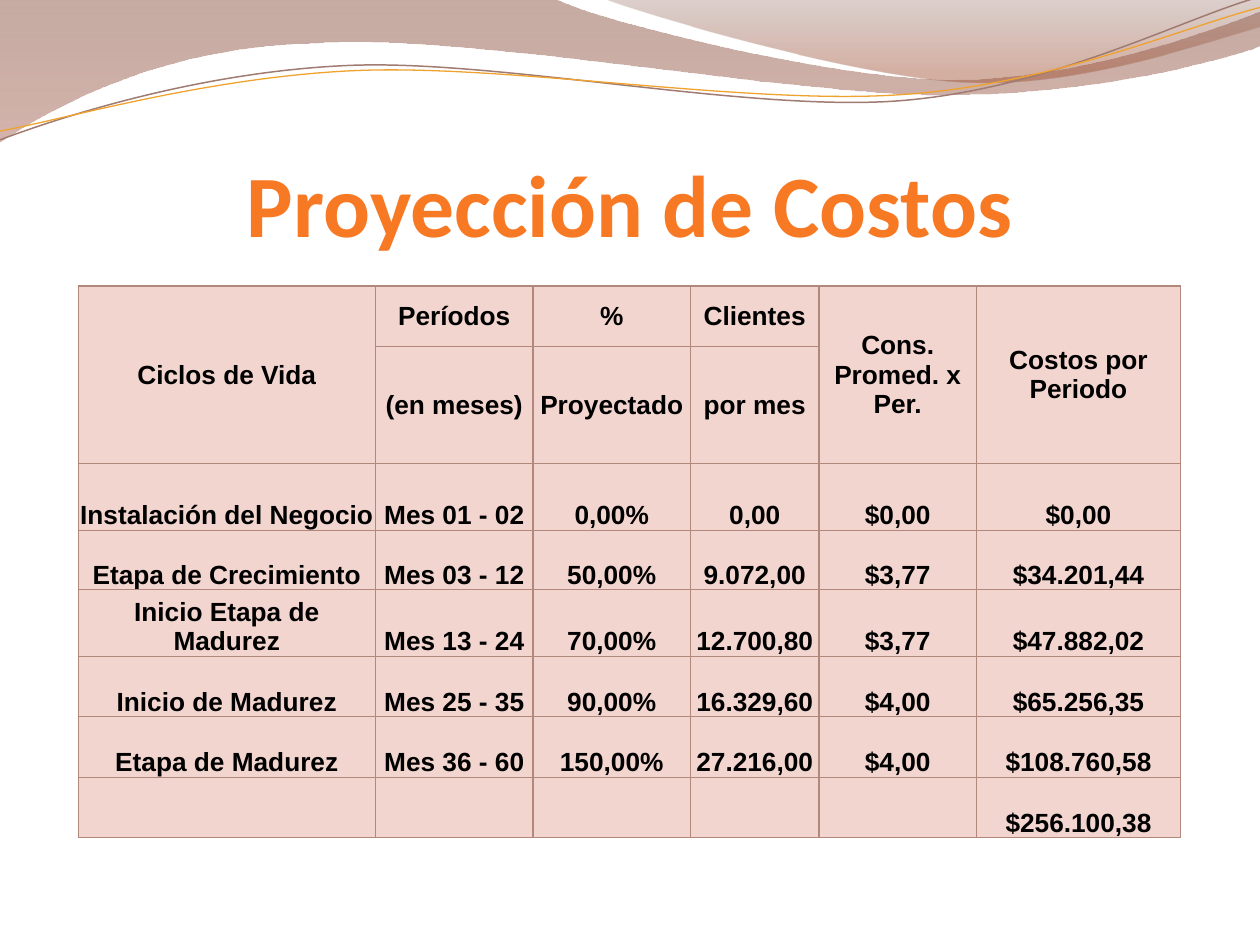
import math

import pptx
import pptx.dml.color
import pptx.enum.text
import pptx.oxml
import pptx.oxml.ns
import pptx.util
from lxml import etree

Inches, Pt = pptx.util.Inches, pptx.util.Pt
RGBColor = pptx.dml.color.RGBColor
ALIGN, ANCHOR = pptx.enum.text.PP_ALIGN, pptx.enum.text.MSO_ANCHOR
qn = pptx.oxml.ns.qn

BLACK = RGBColor(0x00, 0x00, 0x00)
ORANGE = RGBColor(0xF8, 0x79, 0x24)
CELL_PINK = RGBColor(0xF2, 0xD5, 0xCF)
BORDER = RGBColor(0xB2, 0x87, 0x7C)
BROWN = RGBColor(0x81, 0x47, 0x33)
ROSE = RGBColor(0xB1, 0x76, 0x67)
TAUPE = RGBColor(0x8C, 0x63, 0x59)
RUST = RGBColor(0xA1, 0x51, 0x35)
MAUVE = RGBColor(0xA0, 0x7B, 0x71)
GOLD = RGBColor(0xF0, 0xA2, 0x2E)

# Outlines: a start point, then one point for a line or three for a Bézier curve.
# Gradient stops: position, colour, opacity in percent.
BANDS = [
    ([[(0, 0)], [(4.4, -0.01)],
      [(4.76, 0.17), (6.64, 0.63), (7.58, 0.63)],
      [(8.53, 0.63), (9.58, 0.26), (10, 0.09)],
      [(10.01, 0.36)],
      [(9.83, 0.44), (8.7, 0.76), (7.46, 0.75)],
      [(6.22, 0.75), (3.82, 0.28), (2.57, 0.34)],
      [(1.29, 0.36), (0.46, 0.83), (-0.01, 1.13)]],
     [(0, BROWN, 45), (1, ROSE, 55)]),
    ([[(4.79, -0.01)],
      [(5.09, 0.11), (6.82, 0.62), (7.69, 0.65)],
      [(8.56, 0.69), (9.61, 0.32), (10, 0.21)],
      [(10, 0)]],
     [(0, TAUPE, 30), (0.8, RUST, 45)]),
]
# Waves: outline as it lies on the slide, centre of rotation, colour, width.
WAVES = [
    ([[(0, 1.11)],
      [(0.48, 0.93), (1.58, 0.57), (2.77, 0.52)],
      [(3.95, 0.47), (5.93, 0.89), (7.13, 0.8)],
      [(8.33, 0.71), (9.38, 0.15), (9.98, -0.02)]],
     (4.99, 0.58), MAUVE, 0.85),
    ([[(0, 1.04)],
      [(0.47, 0.96), (1.64, 0.61), (2.83, 0.56)],
      [(4.03, 0.51), (5.97, 0.84), (7.17, 0.75)],
      [(8.36, 0.67), (9.41, 0.21), (10, 0.06)]],
     (5, 0.59), GOLD, 0.75),
]
WAVE_TILT = -2.7
UNITS_PER_INCH = 1000

TITLE = "Proyección de Costos"
COLUMN_WIDTHS = [2.36, 1.25, 1.25, 1.02, 1.25, 1.62]
ROW_HEIGHTS = [0.48, 0.93, 0.53, 0.47, 0.53, 0.48, 0.48, 0.48]
HEADER_ROWS = 2
MERGED_HEADER_COLUMNS = [0, 4, 5]
ROWS = [
    ["Ciclos de Vida", "Períodos", "%", "Clientes", "Cons. Promed. x Per.", "Costos por Periodo"],
    ["", "(en meses)", "Proyectado", "por mes", "", ""],
    ["Instalación del Negocio", "Mes 01 - 02", "0,00%", "0,00", "$0,00", "$0,00"],
    ["Etapa de Crecimiento", "Mes 03 - 12", "50,00%", "9.072,00", "$3,77", "$34.201,44"],
    ["Inicio Etapa de Madurez", "Mes 13 - 24", "70,00%", "12.700,80", "$3,77", "$47.882,02"],
    ["Inicio de Madurez", "Mes 25 - 35", "90,00%", "16.329,60", "$4,00", "$65.256,35"],
    ["Etapa de Madurez", "Mes 36 - 60", "150,00%", "27.216,00", "$4,00", "$108.760,58"],
    ["", "", "", "", "", "$256.100,38"],
]


def add_outline(slide, outline, close):
    """Draw all points as lines, then join each group of three into a Bézier curve."""
    points = [(x * UNITS_PER_INCH, y * UNITS_PER_INCH) for segment in outline for x, y in segment]
    builder = slide.shapes.build_freeform(*points[0], scale=Inches(1) / UNITS_PER_INCH)
    builder.add_line_segments(points[1:], close=close)
    shape = builder.convert_to_shape()
    shape.shadow.inherit = False
    lines = iter(list(shape._element.iter(qn("a:lnTo"))))
    for segment in outline[1:]:
        group = [next(lines) for _ in segment]
        if len(group) == 3:
            curve = etree.Element(qn("a:cubicBezTo"))
            group[0].addprevious(curve)
            for line in group:
                curve.append(line[0])
                line.getparent().remove(line)
    return shape


def rotate(outline, center, degrees):
    center_x, center_y = center
    cosine, sine = math.cos(math.radians(degrees)), math.sin(math.radians(degrees))
    return [[(center_x + (x - center_x) * cosine - (y - center_y) * sine,
              center_y + (x - center_x) * sine + (y - center_y) * cosine)
             for x, y in segment] for segment in outline]


def add_band(slide, outline, stops):
    shape = add_outline(slide, outline, close=True)
    shape.line.fill.background()
    shape.fill.gradient()
    shape.fill.gradient_angle = 270
    for stop, (position, color, _) in zip(shape.fill.gradient_stops, stops):
        stop.position = position
        stop.color.rgb = color
    for element, (_, _, opacity) in zip(shape._element.iter(qn("a:srgbClr")), stops):
        etree.SubElement(element, qn("a:alpha"), val=str(opacity * 1000))


def add_wave(slide, outline, center, color, width):
    shape = add_outline(slide, rotate(outline, center, -WAVE_TILT), close=False)
    shape.rotation = WAVE_TILT
    shape.fill.background()
    shape.line.color.rgb = color
    shape.line.width = Pt(width)


def style_paragraph(paragraph, font_name, size, color):
    paragraph.alignment = ALIGN.CENTER
    font = paragraph.font
    font.name, font.size, font.bold = font_name, Pt(size), True
    font.color.rgb = color


def add_title(slide):
    box = slide.shapes.add_textbox(Inches(0.5), Inches(0.77), Inches(9), Inches(1.25))
    frame = box.text_frame
    frame.word_wrap = True
    frame.vertical_anchor = ANCHOR.BOTTOM
    frame.margin_left = frame.margin_right = frame.margin_bottom = 0
    frame.margin_top = Inches(0.05)
    frame.text = TITLE
    style_paragraph(frame.paragraphs[0], "Calibri", 50, ORANGE)


def add_borders(cell):
    properties = cell._tc.get_or_add_tcPr()
    for index, side in enumerate(("a:lnL", "a:lnR", "a:lnT", "a:lnB")):
        line = etree.Element(qn(side), w=str(Pt(0.75)))
        fill = etree.SubElement(line, qn("a:solidFill"))
        etree.SubElement(fill, qn("a:srgbClr"), val=str(BORDER))
        properties.insert(index, line)


def add_cost_table(slide):
    table = slide.shapes.add_table(
        len(ROWS), len(COLUMN_WIDTHS), Inches(0.62), Inches(2.27),
        Inches(sum(COLUMN_WIDTHS)), Inches(sum(ROW_HEIGHTS))).table
    table.first_row = table.horz_banding = False
    for column, width in zip(table.columns, COLUMN_WIDTHS):
        column.width = Inches(width)
    for row, height in zip(table.rows, ROW_HEIGHTS):
        row.height = Inches(height)
    for row_index, texts in enumerate(ROWS):
        for column_index, text in enumerate(texts):
            cell = table.cell(row_index, column_index)
            cell.text = text
            cell.margin_left = cell.margin_right = cell.margin_top = cell.margin_bottom = 0
            cell.vertical_anchor = ANCHOR.MIDDLE if row_index < HEADER_ROWS else ANCHOR.BOTTOM
            cell.fill.solid()
            cell.fill.fore_color.rgb = CELL_PINK
            add_borders(cell)
            style_paragraph(cell.text_frame.paragraphs[0], "Arial", 15, BLACK)
    for column_index in MERGED_HEADER_COLUMNS:
        table.cell(0, column_index).merge(table.cell(HEADER_ROWS - 1, column_index))


def main():
    presentation = pptx.Presentation()
    presentation.slide_width, presentation.slide_height = Inches(10), Inches(7.5)
    slide = presentation.slides.add_slide(presentation.slide_layouts[6])
    for outline, stops in BANDS:
        add_band(slide, outline, stops)
    for outline, center, color, width in WAVES:
        add_wave(slide, outline, center, color, width)
    add_title(slide)
    add_cost_table(slide)
    presentation.save("out.pptx")


if __name__ == "__main__":
    main()
